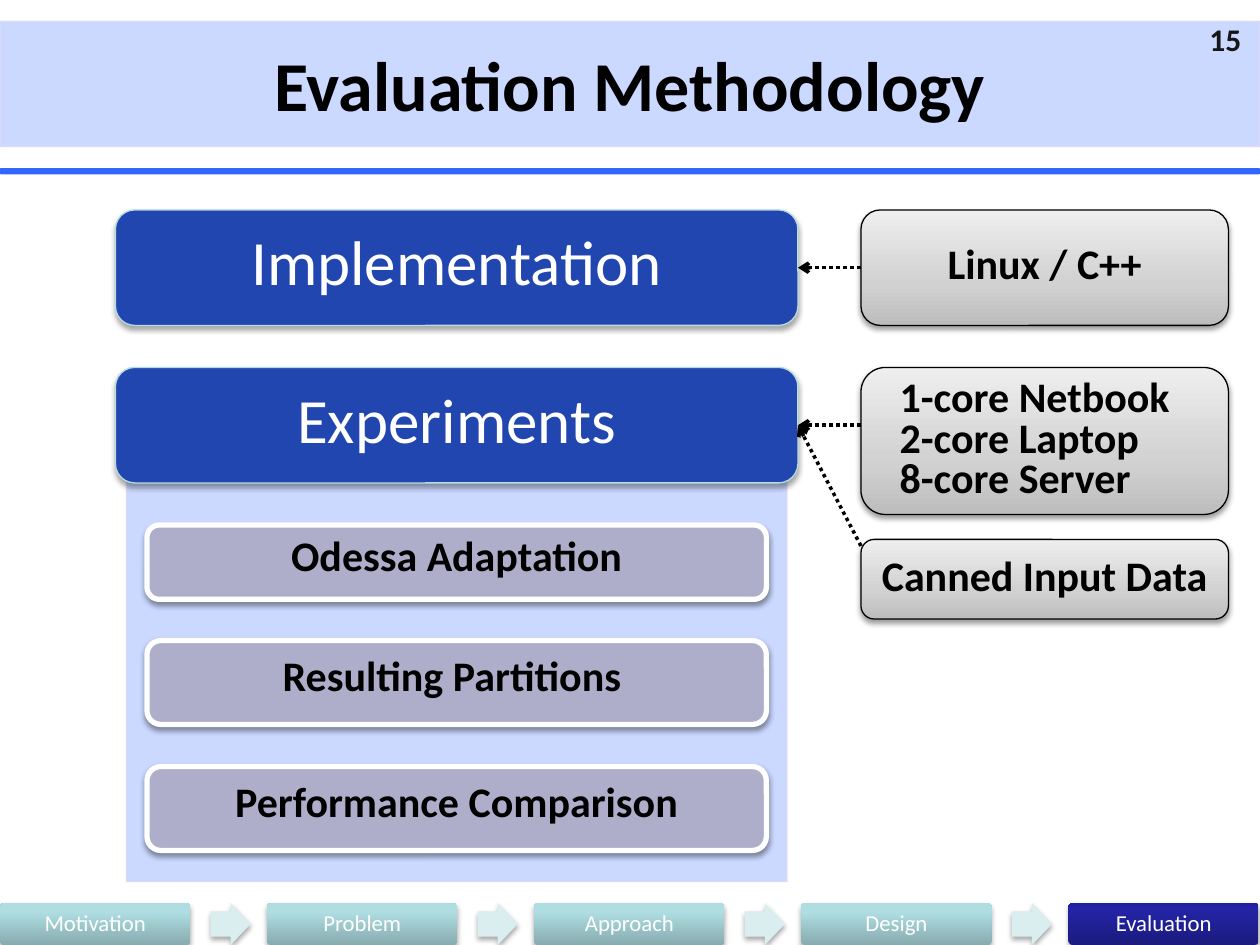
"""Build the Evaluation Methodology slide."""
from copy import deepcopy
from dataclasses import dataclass
from typing import Optional

from lxml.etree import SubElement
from pptx import Presentation
from pptx.dml.color import RGBColor
from pptx.enum.dml import MSO_LINE_DASH_STYLE as Dash
from pptx.enum.shapes import MSO_AUTO_SHAPE_TYPE as ShapeType, MSO_CONNECTOR_TYPE as ConnectorType
from pptx.enum.text import MSO_ANCHOR as Anchor, MSO_AUTO_SIZE as AutoSize, PP_ALIGN as Align
from pptx.oxml.ns import qn
from pptx.util import Pt

FONT = "Calibri"
BLACK = RGBColor(0x00, 0x00, 0x00)
WHITE = RGBColor(0xFF, 0xFF, 0xFF)
NUMBER_INK = RGBColor(0x16, 0x16, 0x16)
ACCENT = RGBColor(0x33, 0x66, 0xFF)
PINK = RGBColor(0xFF, 0xE4, 0xE5)
ROYAL = RGBColor(0x22, 0x46, 0xB0)
PALE_TEAL = RGBColor(0xB6, 0xDC, 0xDF)
LAVENDER = RGBColor(0xAE, 0xAE, 0xCA)
ARROW_TEAL = RGBColor(0xDA, 0xED, 0xEF)
GREY_STOPS = ((0, RGBColor(0xBD, 0xBD, 0xBD)), (0.35, RGBColor(0xD1, 0xD1, 0xD1)),
              (1, RGBColor(0xEE, 0xEE, 0xEE)))
TEAL_STOPS = ((0, RGBColor(0x87, 0xAB, 0xAE)), (0.8, RGBColor(0xAF, 0xDE, 0xE2)),
              (1, RGBColor(0xAF, 0xE0, 0xE4)))
NAVY_STOPS = ((0, RGBColor(0x1B, 0x1B, 0x7E)), (0.8, RGBColor(0x23, 0x23, 0xA3)),
              (1, RGBColor(0x20, 0x20, 0xA6)))
STEPS = ("Motivation", "Problem", "Approach", "Design", "Evaluation")
STEP_PITCH, STEP_WIDTH, STEP_TOP, STEP_HEIGHT = 152.64, 108.72, 516, 24
ARROW_OFFSET, ARROW_WIDTH = 120.24, 23.04
DETAIL_LEFT, DETAIL_WIDTH = 492, 210


@dataclass(frozen=True)
class Style:
    """Look of one family of boxes."""
    fill: object
    line: Optional[RGBColor] = None
    line_width: float = 0.75
    shadow: int = 0
    size: float = 24
    color: RGBColor = BLACK
    bold: bool = True
    spacing: float = 0.8
    margin: Optional[float] = None


@dataclass(frozen=True)
class Box:
    """Place and wording of one box."""
    left: float
    top: float
    width: float
    height: float
    text: str = ""


HEADING = Style(ROYAL, PALE_TEAL, shadow=35, size=36, color=WHITE, bold=False)
TOPIC = Style(LAVENDER, WHITE, line_width=3, shadow=38, spacing=0.6)
DETAIL = Style(GREY_STOPS, BLACK, shadow=38)
STEP = Style(TEAL_STOPS, shadow=35, size=13, color=WHITE, bold=False, spacing=0.9, margin=3.6)
CURRENT_STEP = Style(NAVY_STOPS, shadow=35, size=13, color=WHITE, bold=False, spacing=0.9, margin=3.6)


def apply(target, values: dict) -> None:
    """Set every named attribute on the target."""
    for name, value in values.items():
        setattr(target, name, value)


def write(shape, text: str, size: float, color: RGBColor, bold: bool = True,
          spacing: float = 1, align: Align = Align.CENTER) -> None:
    """Fill a text frame with formatted lines."""
    frame = shape.text_frame
    apply(frame, {"text": text, "word_wrap": True, "auto_size": AutoSize.NONE,
                  "vertical_anchor": Anchor.MIDDLE})
    for paragraph in frame.paragraphs:
        apply(paragraph, {"alignment": align, "line_spacing": spacing})
        apply(paragraph.font, {"name": FONT, "size": Pt(size), "bold": bold})
        paragraph.font.color.rgb = color


def set_alpha(properties, percent: int) -> None:
    """Make the first colour found translucent."""
    color = properties.find(f".//{qn('a:srgbClr')}")
    SubElement(color, qn("a:alpha")).set("val", str(percent * 1000))


def paint(shape, fill) -> None:
    """Apply a solid colour or a bottom-to-top gradient."""
    if isinstance(fill, RGBColor):
        shape.fill.solid()
        shape.fill.fore_color.rgb = fill
        return
    shape.fill.gradient()
    shape.fill.gradient_angle = 90
    stops = shape._element.spPr.find(f".//{qn('a:gsLst')}")
    stops.append(deepcopy(stops[0]))
    for stop, (position, color) in zip(shape.fill.gradient_stops, fill):
        stop.position = position
        stop.color.rgb = color


def cast_shadow(shape, percent: int) -> None:
    """Add a soft shadow straight below the shape."""
    effects = shape._element.spPr.find(qn("a:effectLst"))
    shadow = SubElement(effects, qn("a:outerShdw"), blurRad=str(Pt(3.1)), dist=str(Pt(1.8)),
                        dir="5400000", rotWithShape="0")
    color = SubElement(shadow, qn("a:srgbClr"), val=str(BLACK))
    SubElement(color, qn("a:alpha"), val=str(percent * 1000))


def add_box(slide, box: Box, style: Style, kind: ShapeType = ShapeType.ROUNDED_RECTANGLE,
            corner: Optional[float] = None, align: Align = Align.CENTER):
    """Draw one box in its style and return it."""
    shape = slide.shapes.add_shape(kind, Pt(box.left), Pt(box.top), Pt(box.width), Pt(box.height))
    shape.shadow.inherit = False
    if corner is not None:
        shape.adjustments[0] = corner
    paint(shape, style.fill)
    if style.line is None:
        shape.line.fill.background()
    else:
        shape.line.color.rgb = style.line
        shape.line.width = Pt(style.line_width)
    if style.shadow:
        cast_shadow(shape, style.shadow)
    if style.margin is not None:
        apply(shape.text_frame, {f"margin_{side}": Pt(style.margin)
                                 for side in ("left", "top", "right", "bottom")})
    if box.text:
        write(shape, box.text, style.size, style.color, style.bold, style.spacing, align)
    return shape


def tint(shape) -> None:
    """Give a shape the translucent blue fill and faint outline."""
    paint(shape, ACCENT)
    set_alpha(shape._element.spPr.find(qn("a:solidFill")), 25)
    shape.line.color.rgb = PINK
    shape.line.width = Pt(1)
    set_alpha(shape._element.spPr.find(qn("a:ln")), 30)


def add_arrow(slide, top: float, target, source=None) -> None:
    """Point a dotted arrow at the right side of the target."""
    arrow = slide.shapes.add_connector(ConnectorType.STRAIGHT, Pt(DETAIL_LEFT), Pt(top),
                                       target.left + target.width, target.top + target.height // 2)
    if source is not None:
        arrow.begin_connect(source, 1)
    arrow.end_connect(target, 3)
    arrow.line.color.rgb = BLACK
    apply(arrow.line, {"width": Pt(2), "dash_style": Dash.ROUND_DOT})
    SubElement(arrow.line._get_or_add_ln(), qn("a:tailEnd"), type="arrow")
    SubElement(arrow._element.spPr, qn("a:effectLst"))


def main() -> None:
    """Assemble and save the slide."""
    presentation = Presentation()
    apply(presentation, {"slide_width": Pt(720), "slide_height": Pt(540)})
    slide = presentation.slides.add_slide(presentation.slide_layouts[5])

    title = slide.shapes.title
    apply(title, {"left": Pt(0), "top": Pt(12), "width": Pt(720), "height": Pt(72)})
    tint(title)
    write(title, "Evaluation Methodology", 40, BLACK)
    add_box(slide, Box(0, 96, 720, 3.6), Style(ACCENT))
    number = slide.shapes.add_textbox(Pt(684), Pt(12), Pt(36), Pt(24))
    write(number, "15", 18, NUMBER_INK, spacing=0.8, align=Align.LEFT)

    tint(add_box(slide, Box(72, 270, 378, 234), Style(ACCENT), ShapeType.RECTANGLE))
    implementation = add_box(slide, Box(66, 120, 390, 66, "Implementation"), HEADING)
    experiments = add_box(slide, Box(66, 210, 390, 66, "Experiments"), HEADING)
    for top, height, text in ((300, 42.5, "Odessa Adaptation"), (366, 48, "Resulting Partitions "),
                              (438, 48, "Performance Comparison")):
        add_box(slide, Box(84, top, 354, height, text), TOPIC)

    language = add_box(slide, Box(DETAIL_LEFT, 120, DETAIL_WIDTH, 66, "Linux / C++"), DETAIL)
    machines = add_box(slide, Box(DETAIL_LEFT, 210, DETAIL_WIDTH, 84,
                                  "1-core Netbook\n2-core Laptop\n8-core Server"),
                       DETAIL, align=Align.LEFT)
    machines.text_frame.margin_left = Pt(18)
    add_box(slide, Box(DETAIL_LEFT, 308.25, DETAIL_WIDTH, 45.5, "Canned Input Data"), DETAIL)
    add_arrow(slide, 153, implementation, language)
    for top in (243, 312):
        add_arrow(slide, top, experiments)

    for index, name in enumerate(STEPS):
        left = index * STEP_PITCH
        is_last = name == STEPS[-1]
        add_box(slide, Box(left, STEP_TOP, STEP_WIDTH, STEP_HEIGHT, name),
                CURRENT_STEP if is_last else STEP, corner=0.1)
        if not is_last:
            add_box(slide, Box(left + ARROW_OFFSET, STEP_TOP, ARROW_WIDTH, STEP_HEIGHT),
                    Style(ARROW_TEAL, shadow=35), ShapeType.RIGHT_ARROW, corner=0.6)
    presentation.save("out.pptx")


if __name__ == "__main__":
    main()
